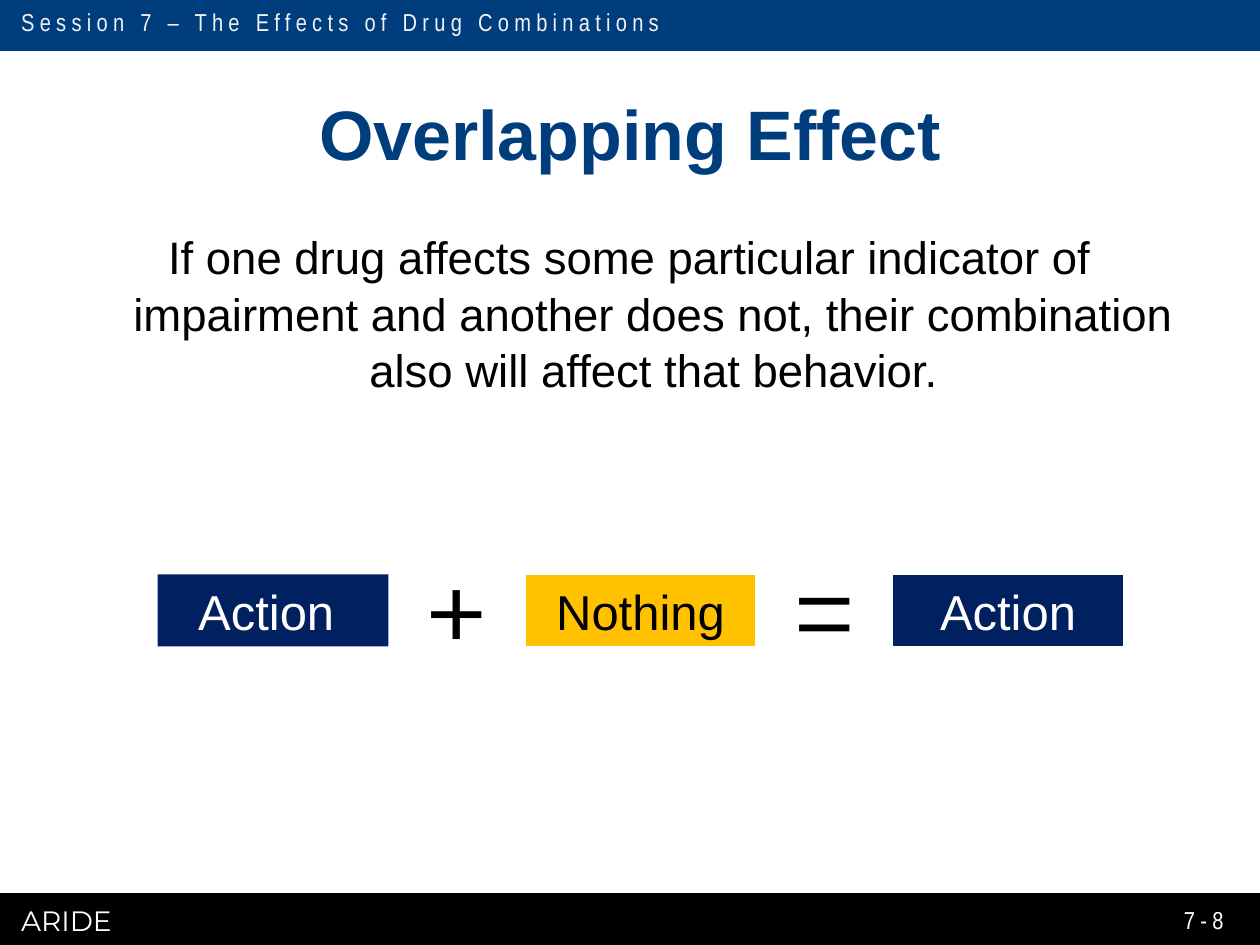
from dataclasses import dataclass

from pptx import Presentation
from pptx import util as u
from pptx.dml.color import RGBColor
from pptx.enum import shapes, text

WIDTH, HEIGHT = 10, 7.5
COLUMN = WIDTH / 12


@dataclass(frozen=True)
class Theme:
    blue: str = "003D7D"
    navy: str = "002060"
    gold: str = "FFC100"
    black: str = "000000"
    white: str = "FFFFFF"
    pale: str = "F2F2F2"
    main: str = "Arial"
    narrow: str = "Arial Narrow"
    display: str = "Montserrat"
    title_size: int = 40
    body_size: int = 26
    term_size: int = 28
    operator_size: int = 66
    session_size: int = 14
    course_size: int = 16


THEME = Theme()
LEFT, CENTER, RIGHT = text.PP_ALIGN.LEFT, text.PP_ALIGN.CENTER, text.PP_ALIGN.RIGHT
TOP, MIDDLE = text.MSO_ANCHOR.TOP, text.MSO_ANCHOR.MIDDLE


def inches(*lengths):
    return [u.Inches(length) for length in lengths]


def write(holder, words, size, color, font=THEME.main, align=CENTER,
          anchor=TOP, bold=False, spacing=0, inset=None):
    frame = holder.text_frame
    frame.text = words
    frame_format = {"word_wrap": True, "vertical_anchor": anchor,
                    "auto_size": text.MSO_AUTO_SIZE.NONE}
    if inset is not None:
        for side in ("left", "top", "right", "bottom"):
            frame_format["margin_" + side] = u.Inches(inset)
    for key, value in frame_format.items():
        setattr(frame, key, value)
    paragraph = frame.paragraphs[0]
    paragraph.alignment = align
    run = paragraph.runs[0]
    for key, value in {"size": u.Pt(size), "name": font, "bold": bold}.items():
        setattr(run.font, key, value)
    run.font.color.rgb = RGBColor.from_string(color)
    if spacing:
        run.font._element.set("spc", str(spacing * 100))
    return paragraph


def add_label(slide, place, words, size, color, **style):
    return write(slide.shapes.add_textbox(*inches(*place)), words, size, color, **style)


def add_block(slide, place, fill, outline=None, weight=0.75):
    block = slide.shapes.add_shape(shapes.MSO_SHAPE.RECTANGLE, *inches(*place))
    block.shadow.inherit = False
    block.fill.solid()
    block.fill.fore_color.rgb = RGBColor.from_string(fill)
    if outline:
        block.line.color.rgb = RGBColor.from_string(outline)
        block.line.width = u.Pt(weight)
    else:
        block.line.fill.background()
    return block


def add_bands(slide):
    band_height = 0.4
    add_block(slide, (0, -0.01, WIDTH, band_height), THEME.blue, THEME.blue, 2)
    add_label(slide, (0.07, 0.01, 7.37, 0.34),
              "Session 7 – The Effects of Drug Combinations", THEME.session_size,
              THEME.pale, font=THEME.narrow, align=LEFT, spacing=3)
    footer_top = HEIGHT - band_height
    add_block(slide, (0, footer_top, WIDTH, band_height), THEME.black, THEME.black, 2)
    add_label(slide, (0.07, footer_top + 0.02, 5.72, 0.37), "ARIDE",
              THEME.course_size, THEME.white, font=THEME.display, align=LEFT)
    add_label(slide, (7.48, footer_top, 2.33, band_height), "7-8",
              THEME.session_size, THEME.white, font=THEME.narrow, align=RIGHT,
              anchor=MIDDLE, spacing=3)


def add_title(slide, words):
    title = slide.shapes.title
    for key, value in zip(("left", "top", "width", "height"), inches(0.5, 0.7, 9, 0.7)):
        setattr(title, key, value)
    write(title, words, THEME.title_size, THEME.blue, anchor=MIDDLE, bold=True, inset=0)


def add_definition(slide, words):
    paragraph = add_label(slide, (0.5, 1.8, 9, 1.52), words, THEME.body_size,
                          THEME.black, inset=0)
    paragraph.line_spacing = 1.04
    paragraph.space_after = u.Pt(6)
    properties = paragraph._p.get_or_add_pPr()
    hanging = u.Inches(0.38)
    properties.set("marL", str(hanging))
    properties.set("indent", str(-hanging))


def add_equation(slide, terms, operators):
    start, step, term_width = 1.5 * COLUMN, 3.5 * COLUMN, 2.2 * COLUMN
    operator_width = 0.97
    for index, (words, fill, outline, color) in enumerate(terms):
        term = add_block(slide, (start + index * step, 4.56, term_width, 0.57),
                         fill, outline)
        write(term, words, THEME.term_size, color, anchor=MIDDLE)
    first_gap = start + (term_width + step - operator_width) / 2
    for index, sign in enumerate(operators):
        add_label(slide, (first_gap + index * step, 4.24, operator_width, 1.21),
                  sign, THEME.operator_size, THEME.black, font=THEME.display)


def main():
    deck = Presentation()
    deck.slide_width, deck.slide_height = inches(WIDTH, HEIGHT)
    slide = deck.slides.add_slide(deck.slide_layouts[5])
    add_bands(slide)
    add_title(slide, "Overlapping Effect")
    add_definition(slide, "If one drug affects some particular indicator of impairment "
                          "and another does not, their combination also will affect "
                          "that behavior.")
    add_equation(slide, [
        ("Action ", THEME.navy, None, THEME.white),
        ("Nothing", THEME.gold, THEME.white, THEME.black),
        ("Action", THEME.navy, THEME.white, THEME.white),
    ], "+=")
    deck.save("out.pptx")


if __name__ == "__main__":
    main()
